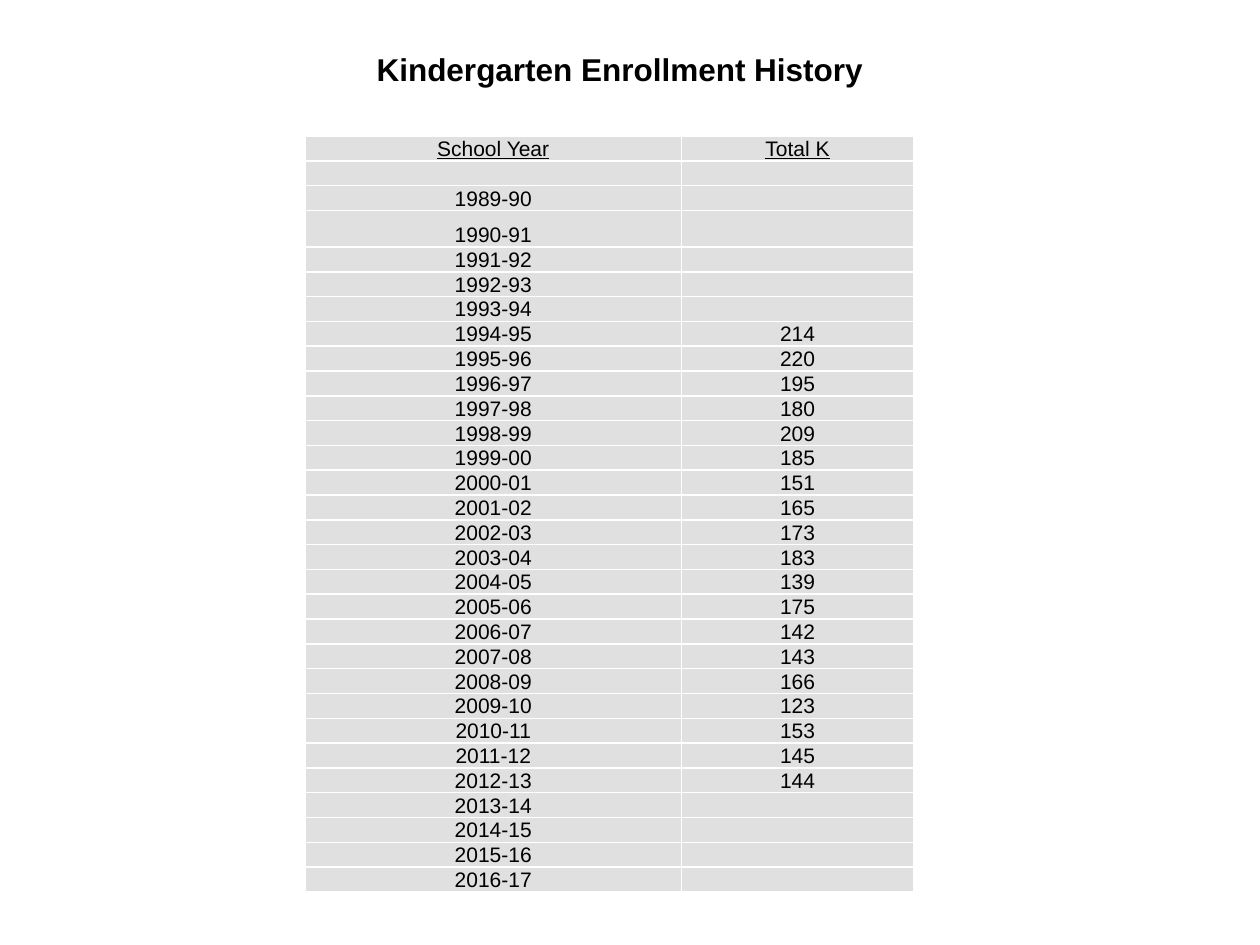
import lxml.etree
import pptx
import pptx.dml.color
import pptx.enum.text
import pptx.oxml.ns
import pptx.util
from pptx.util import Inches

COLORS = {"text": "000000", "cell": "E1E0E0", "border": "FFFFFF"}
FONT = "Arial"
FIRST_YEAR, LAST_YEAR = 1989, 2016
FIRST_COUNTED_YEAR = 1994
TOTALS = [214, 220, 195, 180, 209, 185, 151, 165, 173, 183,
          139, 175, 142, 143, 166, 123, 153, 145, 144]
COLUMN_WIDTHS = (2.99, 1.84)
ROW_HEIGHT = 0.19
TALL_ROW, TALL_ROW_HEIGHT = 3, 0.29
CELL_SIZE = 12


def color(name):
    return pptx.dml.color.RGBColor.from_string(COLORS[name])


def enrollment_rows():
    totals = dict(enumerate(TOTALS, FIRST_COUNTED_YEAR))
    rows = [("School Year", "Total K"), ("", "")]
    for year in range(FIRST_YEAR, LAST_YEAR + 1):
        rows.append((f"{year}-{(year + 1) % 100:02d}", str(totals.get(year, ""))))
    return rows


def format_paragraph(paragraph, size):
    paragraph.alignment = pptx.enum.text.PP_ALIGN.CENTER
    paragraph.font.name = FONT
    paragraph.font.size = pptx.util.Pt(size)
    paragraph.font.color.rgb = color("text")


def add_title(slide, left, top, width, height):
    title = slide.shapes.title
    title.left, title.top, title.width, title.height = left, top, width, height
    frame = title.text_frame
    frame.text = "Kindergarten Enrollment History"
    frame.vertical_anchor = pptx.enum.text.MSO_ANCHOR.MIDDLE
    format_paragraph(frame.paragraphs[0], 18)
    frame.paragraphs[0].font.bold = True


def add_borders(cell):
    """Draw all four cell edges, placed before the fill as the schema requires."""
    properties = cell._tc.get_or_add_tcPr()
    for index, edge in enumerate(("lnL", "lnR", "lnT", "lnB")):
        line = lxml.etree.Element(pptx.oxml.ns.qn(f"a:{edge}"), w=str(pptx.util.Pt(1)))
        fill = lxml.etree.SubElement(line, pptx.oxml.ns.qn("a:solidFill"))
        lxml.etree.SubElement(fill, pptx.oxml.ns.qn("a:srgbClr"), val=COLORS["border"])
        properties.insert(index, line)


def format_cell(cell, text, underline):
    cell.text = text
    cell.vertical_anchor = pptx.enum.text.MSO_ANCHOR.BOTTOM
    cell.margin_left = cell.margin_right = cell.margin_top = Inches(0.01)
    cell.margin_bottom = 0
    cell.fill.solid()
    cell.fill.fore_color.rgb = color("cell")
    paragraph = cell.text_frame.paragraphs[0]
    format_paragraph(paragraph, CELL_SIZE)
    if underline:
        paragraph.font.underline = True
    if not text:
        # An empty cell takes its line height from the end-of-paragraph size.
        lxml.etree.SubElement(paragraph._p, pptx.oxml.ns.qn("a:endParaRPr"),
                              sz=str(CELL_SIZE * 100))
    add_borders(cell)


def add_enrollment_table(slide, left, top):
    rows = enrollment_rows()
    heights = [ROW_HEIGHT] * len(rows)
    heights[TALL_ROW] = TALL_ROW_HEIGHT
    table = slide.shapes.add_table(
        len(rows), len(COLUMN_WIDTHS), left, top,
        Inches(sum(COLUMN_WIDTHS)), Inches(sum(heights))).table
    table.first_row = table.horz_banding = False
    for column, width in zip(table.columns, COLUMN_WIDTHS):
        column.width = Inches(width)
    for row_index, (row, height) in enumerate(zip(rows, heights)):
        table.rows[row_index].height = Inches(height)
        for column_index, text in enumerate(row):
            format_cell(table.cell(row_index, column_index), text, row_index == 0)


def main():
    presentation = pptx.Presentation()
    presentation.slide_width, presentation.slide_height = Inches(10), Inches(7.5)
    slide = presentation.slides.add_slide(
        presentation.slide_layouts.get_by_name("Title Only"))
    add_title(slide, Inches(0.42), Inches(0.17), Inches(9), Inches(0.75))
    add_enrollment_table(slide, Inches(2.42), Inches(1.08))
    presentation.save("out.pptx")


if __name__ == "__main__":
    main()
